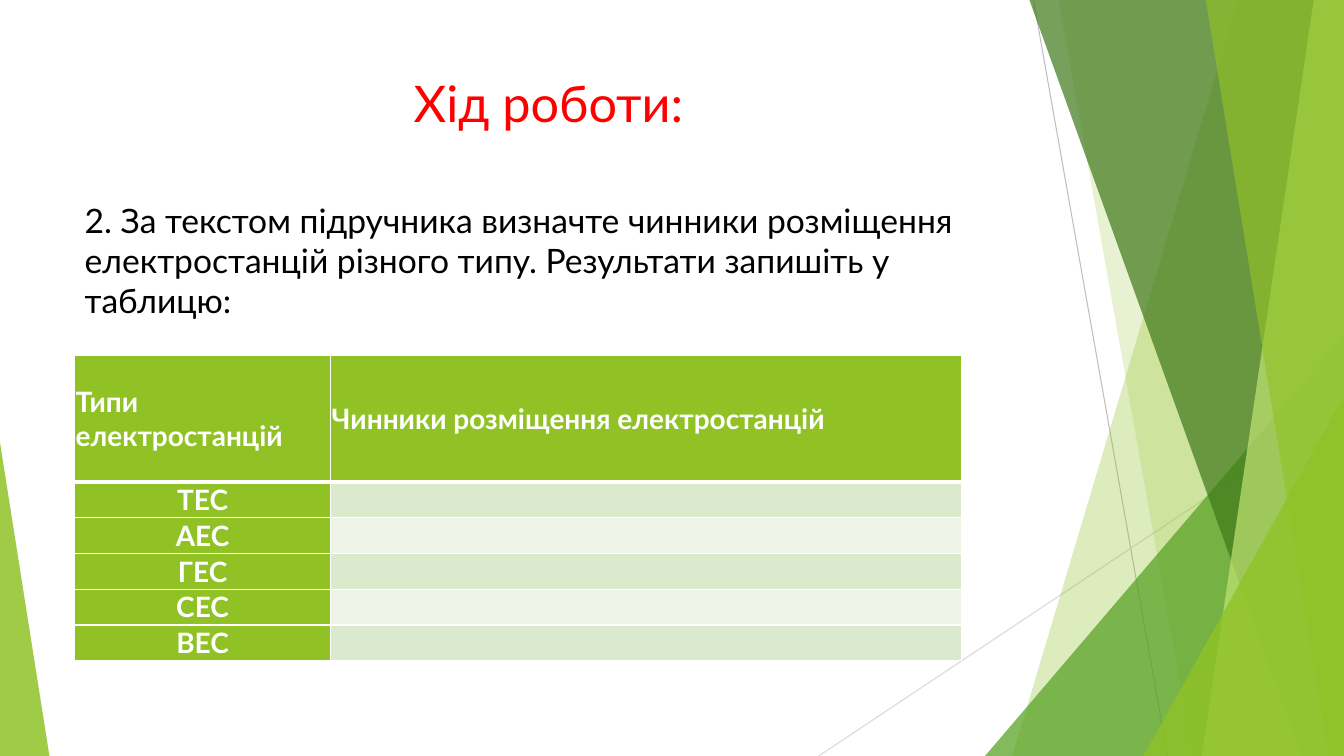
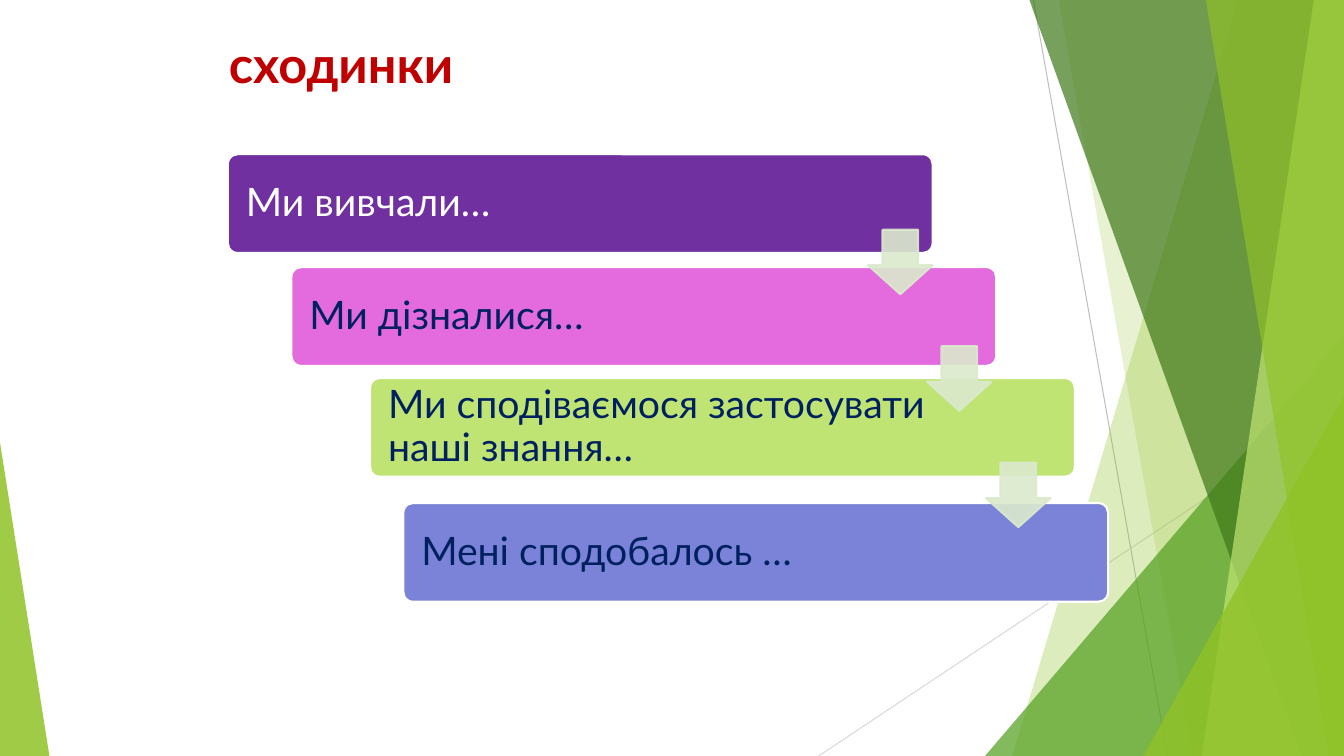
from lxml.etree import SubElement
from pptx import Presentation
from pptx.dml.color import RGBColor
from pptx.enum.shapes import MSO_CONNECTOR, MSO_SHAPE
from pptx.enum.text import MSO_ANCHOR, MSO_AUTO_SIZE, PP_ALIGN
from pptx.oxml.ns import qn
from pptx.util import Inches, Pt

WIDE, HIGH = 13.33, 7.5
FONT = "Lato"
COLORS = {
    "white": "FFFFFF", "black": "000000", "red": "FF0000", "brick": "C00000",
    "navy": "002060", "lime": "90C226", "leaf": "54A021", "moss": "3F7819",
    "pale": "C0E474", "mint": "DBE9CD", "mist": "EEF4E8", "gray": "BFBFBF",
    "silver": "D9D9D9", "purple": "7030A0", "pink": "E36BDD", "blue": "7A83D8",
}

# Top left, top right, bottom right, bottom left; colour; opacity
BANDS = [
    ((12.28, WIDE, WIDE, 10.04), "lime", 30),
    ((10.5, WIDE, WIDE, 11.83), "lime", 20),
    ((10.21, WIDE, WIDE, 12.91), "moss", 70),
    ((13.03, WIDE, WIDE, 11.92), "pale", 70),
    ((11.96, WIDE, WIDE, 13.18), "lime", 65),
]
# Left, top, width; place of the peak; colour; opacity
PEAKS = [
    (9.77, 3.33, 3.56, 1, "leaf", 72),
    (11.34, 3.93, 1.99, 1, "lime", 80),
    (0, 4.39, 0.49, 0, "lime", 85),
]
STEPS = [
    (0, 0, "Ми вивчали…", "purple", "white"),
    (0.63, 1.12, "Ми дізналися…", "pink", "navy"),
    (1.41, 2.22, "Ми сподіваємося застосувати наші знання…", "pale", "navy"),
    (1.74, 3.46, "Мені сподобалось …", "blue", "navy"),
]
PLANTS = ["ТЕС", "АЕС", "ГЕС", "СЕС", "ВЕС"]


def rgb(name):
    return RGBColor.from_string(COLORS[name])


def paint(shape, fill, line=None, alpha=100):
    """Set fill, outline and opacity, without a shadow."""
    shape.shadow.inherit = False
    shape.fill.solid()
    shape.fill.fore_color.rgb = rgb(fill)
    if line:
        shape.line.color.rgb = rgb(line)
        shape.line.width = Pt(1.5)
    else:
        shape.line.fill.background()
    if alpha < 100:
        for color in shape.element.spPr.iter(qn("a:srgbClr")):
            SubElement(color, qn("a:alpha"), val=str(alpha * 1000))


def write(par, text, size, color, bold=False, align=PP_ALIGN.LEFT):
    par.alignment = align
    run = par.add_run()
    run.text = text
    font = run.font
    font.name, font.size, font.bold = FONT, Pt(size), bold
    font.color.rgb = rgb(color)


def place(holder, box):
    """Move a placeholder to a box and return its first paragraph."""
    holder.left, holder.top, holder.width, holder.height = map(Inches, box)
    frame = holder.text_frame
    frame.word_wrap = True
    frame.auto_size = MSO_AUTO_SIZE.NONE
    frame.vertical_anchor = MSO_ANCHOR.TOP
    return frame.paragraphs[0]


def add_title(slide, box, text, color, **style):
    write(place(slide.shapes.title, box), text, 36, color, **style)


def add_rule(shapes, start, end, color):
    rule = shapes.add_connector(MSO_CONNECTOR.STRAIGHT,
                                *map(Inches, start + end))
    rule.line.color.rgb = rgb(color)
    rule.line.width = Pt(0.75)
    SubElement(rule.element.spPr, qn("a:effectLst"))
    return rule


def add_band(shapes, edges, color, alpha):
    spots = [(Inches(x), Inches(y)) for x, y in zip(edges, (0, 0, HIGH, HIGH))]
    path = shapes.build_freeform(*spots[0], scale=1.0)
    path.add_line_segments(spots[1:], close=True)
    band = path.convert_to_shape()
    paint(band, color, alpha=alpha)
    return band


def add_peak(shapes, left, top, width, tip, color, alpha):
    peak = shapes.add_shape(MSO_SHAPE.ISOSCELES_TRIANGLE, Inches(left),
                            Inches(top), Inches(width), Inches(HIGH - top))
    peak.adjustments[0] = tip
    paint(peak, color, alpha=alpha)
    return peak


def set_master(master, slide):
    """Draw the backdrop on a slide, then move it behind the master's parts."""
    shapes = slide.shapes
    parts = [add_rule(shapes, (10.25, 0), (11.58, HIGH), "gray"),
             add_rule(shapes, (WIDE, 4.03), (8.12, HIGH), "silver")]
    bands = [add_band(shapes, *band) for band in BANDS]
    peaks = [add_peak(shapes, *peak) for peak in PEAKS]
    parts += bands[:2] + peaks[:1] + bands[2:] + peaks[1:]
    for index, part in enumerate(parts):
        node = part.element
        node.xpath(".//p:cNvPr")[0].set("id", str(100 + index))
        master.shapes.element.insert(2 + index, node)


def edge_cell(cell, header):
    props = cell.fill and cell._tc.get_or_add_tcPr()
    for index, side in enumerate(("lnL", "lnR", "lnT", "lnB")):
        width = 3 if header and side == "lnB" else 1
        line = SubElement(props, qn(f"a:{side}"), w=str(Pt(width)))
        fill = SubElement(line, qn("a:solidFill"))
        SubElement(fill, qn("a:srgbClr"), val=COLORS["white"])
        props.insert(index, line)


def fill_cell(cell, text, color, align, header):
    cell.margin_left = cell.margin_right = Inches(0.01)
    cell.margin_top = cell.margin_bottom = Inches(0.01)
    cell.vertical_anchor = MSO_ANCHOR.MIDDLE
    cell.fill.solid()
    cell.fill.fore_color.rgb = rgb(color)
    edge_cell(cell, header)
    par = cell.text_frame.paragraphs[0]
    if text:
        par.space_after = Pt(4.8)
        write(par, text, 20, "white", bold=True, align=align)
    else:
        par.font.size = Pt(16)


def add_grid(slide, left, top):
    rows = [("Типи електростанцій", "Чинники розміщення електростанцій")]
    rows += [(plant, "") for plant in PLANTS]
    cols, heights = (2.54, 6.26), [1.25] + [0.3] * len(PLANTS)
    table = slide.shapes.add_table(
        len(rows), len(cols), Inches(left), Inches(top),
        Inches(sum(cols)), Inches(sum(heights))).table
    for col, width in zip(table.columns, cols):
        col.width = Inches(width)
    for y, (row, height) in enumerate(zip(rows, heights)):
        table.rows[y].height = Inches(height)
        align = PP_ALIGN.CENTER if y else PP_ALIGN.LEFT
        for x, text in enumerate(row):
            shade = "mint" if y % 2 else "mist"
            color = shade if x and y else "lime"
            fill_cell(table.cell(y, x), text, color, align, y == 0)


def add_step(slide, left, top, text, fill, color):
    step = slide.shapes.add_shape(MSO_SHAPE.ROUNDED_RECTANGLE, Inches(left),
                                  Inches(top), Inches(6.99), Inches(0.98))
    step.adjustments[0] = 0.1
    paint(step, fill, "white")
    frame = step.text_frame
    frame.word_wrap = True
    frame.vertical_anchor = MSO_ANCHOR.MIDDLE
    frame.margin_left, frame.margin_right = Inches(0.15), Inches(1.39)
    frame.margin_top = frame.margin_bottom = 0
    par = frame.paragraphs[0]
    par.line_spacing = 0.9
    write(par, text, 28, color)


def add_stairs(slide, left, top):
    for x, y, *look in STEPS:
        add_step(slide, left + x, top + y, *look)
    for index in range(len(STEPS) - 1):
        arrow = slide.shapes.add_shape(
            MSO_SHAPE.DOWN_ARROW, Inches(left + 6.35 + 0.585 * index),
            Inches(top + 0.75 + 1.155 * index), Inches(0.64), Inches(0.64))
        arrow.adjustments[0], arrow.adjustments[1] = 0.45, 0.55
        # The shaft takes 55 % of the width, the head 45 % of the height
        arrow.adjustments[0], arrow.adjustments[1] = 0.55, 0.45
        paint(arrow, "mint", "mint", alpha=90)


def fill_task(slide):
    add_title(slide, (0.74, 0.67, 9.4, 1.44), "Хід роботи:", "red",
              align=PP_ALIGN.CENTER)
    par = place(slide.placeholders[1], (0.74, 1.93, 9.54, 4.68))
    par.space_before = Pt(10)
    write(par, "2. За текстом підручника визначте чинники розміщення "
          "електростанцій різного типу. Результати запишіть у таблицю:",
          24, "black")
    props = par._p.get_or_add_pPr()
    props.set("marL", "0")
    props.set("indent", "0")
    SubElement(props, qn("a:buNone"))
    add_grid(slide, 0.74, 3.53)


def fill_stairs(slide):
    add_title(slide, (2.17, 0.28, 9, 0.79), "сходинки", "brick", bold=True)
    add_stairs(slide, 2.26, 1.53)


def main():
    prs = Presentation()
    prs.slide_width, prs.slide_height = Inches(WIDE), Inches(HIGH)
    task = prs.slides.add_slide(prs.slide_layouts[1])
    set_master(prs.slide_master, task)
    fill_task(task)
    fill_stairs(prs.slides.add_slide(prs.slide_layouts[5]))
    prs.save("out.pptx")


if __name__ == "__main__":
    main()
